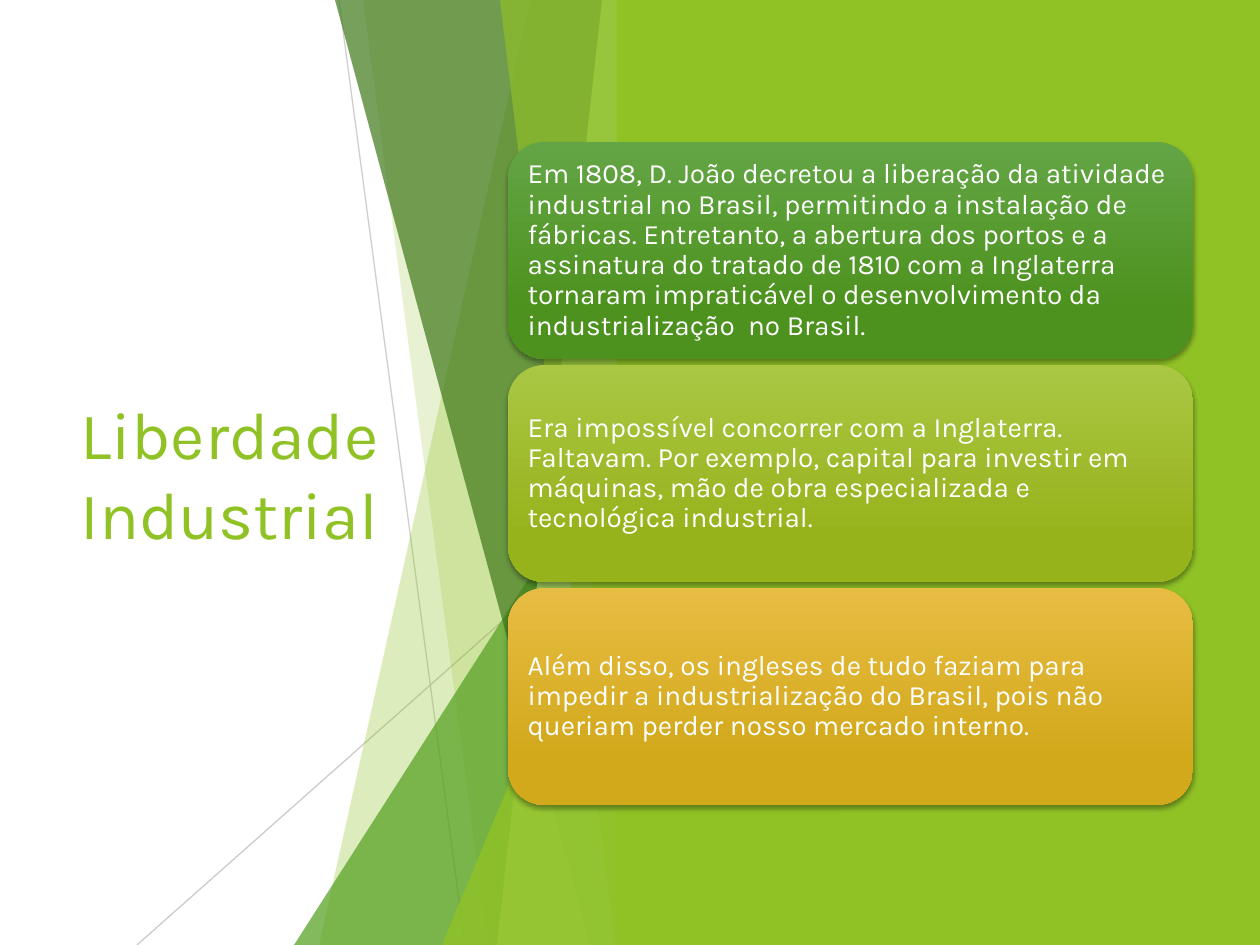
from dataclasses import dataclass

from lxml import etree
from pptx import Presentation
from pptx import util as u
from pptx.dml.color import RGBColor
from pptx.enum import shapes, text
from pptx.oxml.ns import qn

EMU_PER_PX = 914400 / 126
WIDTH, HEIGHT = 1260, 945
FACET_RIGHT = 630
FONT = "Karla"

WHITE = RGBColor(0xFF, 0xFF, 0xFF)
LIME = RGBColor(0x90, 0xC2, 0x26)
GREEN = RGBColor(0x54, 0xA0, 0x21)
DARK_GREEN = RGBColor(0x3F, 0x78, 0x19)
PALE_LIME = RGBColor(0xC0, 0xE4, 0x74)
GREY = RGBColor(0xBF, 0xBF, 0xBF)


@dataclass(frozen=True)
class Ray:
    start: tuple[int, int]
    end: tuple[int, int]
    opacity: int


@dataclass(frozen=True)
class Facet:
    """A band from a slanted left edge to the common right edge."""
    top_x: int
    bottom_x: int
    color: RGBColor
    opacity: int


@dataclass(frozen=True)
class Wedge:
    """A right triangle standing on the slide's bottom edge."""
    left: int
    top: int
    color: RGBColor
    opacity: int


@dataclass(frozen=True)
class Card:
    light: RGBColor
    deep: RGBColor
    words: str


RAYS = [Ray((339, 0), (465, HEIGHT), 75), Ray((630, 508), (137, HEIGHT), 80)]

FACETS = [
    Facet(530, 319, LIME, 30),
    Facet(363, 488, LIME, 20),
    Wedge(294, 420, GREEN, 72),
    Facet(335, 590, DARK_GREEN, 70),
    Facet(602, 497, PALE_LIME, 70),
    Facet(500, 615, LIME, 65),
    Wedge(442, 495, LIME, 80),
]

CARD_LEFT, CARD_TOP, CARD_WIDTH, CARD_HEIGHT, CARD_PITCH = 508, 142, 685, 217, 223
CARDS = [
    Card(RGBColor(0x63, 0xA5, 0x45), RGBColor(0x4D, 0x92, 0x1E),
         "Em 1808, D. João decretou a liberação da atividade industrial no Brasil, "
         "permitindo a instalação de fábricas. Entretanto, a abertura dos portos e a "
         "assinatura do tratado de 1810 com a Inglaterra tornaram impraticável o "
         "desenvolvimento da industrialização  no Brasil."),
    Card(RGBColor(0xAA, 0xC7, 0x44), RGBColor(0x97, 0xB3, 0x1C),
         "Era impossível concorrer com a Inglaterra. Faltavam. Por exemplo, capital "
         "para investir em máquinas, mão de obra especializada e tecnológica industrial."),
    Card(RGBColor(0xE7, 0xBC, 0x43), RGBColor(0xD2, 0xA9, 0x1B),
         "Além disso, os ingleses de tudo faziam para impedir a industrialização do "
         "Brasil, pois não queriam perder nosso mercado interno."),
]


def px(length: int) -> u.Emu:
    return u.Emu(round(length * EMU_PER_PX))


def set_opacity(element, percent: int) -> None:
    for color in element.spPr.iter(qn("a:srgbClr")):
        etree.SubElement(color, qn("a:alpha"), val=str(percent * 1000))


def paint(shape, color: RGBColor, opacity: int = 100) -> None:
    shape.shadow.inherit = False
    shape.line.fill.background()
    shape.fill.solid()
    shape.fill.fore_color.rgb = color
    if opacity < 100:
        set_opacity(shape.element, opacity)


def add_block(page, kind, left: int, top: int, width: int, height: int):
    return page.shapes.add_shape(kind, px(left), px(top), px(width), px(height))


def write(frame, words: str, size: int, color: RGBColor, spacing: float) -> None:
    frame.word_wrap = True
    frame.auto_size = text.MSO_AUTO_SIZE.NONE
    frame.vertical_anchor = text.MSO_ANCHOR.MIDDLE
    para = frame.paragraphs[0]
    para.alignment = text.PP_ALIGN.LEFT
    para.line_spacing = spacing
    span = para.add_run()
    span.text = words
    span.font.name = FONT
    span.font.size = u.Pt(size)
    span.font.color.rgb = color


def add_title(page) -> None:
    title = page.shapes.title
    title.left, title.top, title.width, title.height = map(px, (68, 190, 367, 565))
    write(title.text_frame, "Liberdade Industrial", 38, LIME, 1.0)


def add_ray(page, ray: Ray) -> None:
    line = page.shapes.add_connector(
        shapes.MSO_CONNECTOR.STRAIGHT, *map(px, ray.start + ray.end))
    line.line.color.rgb = GREY
    line.line.width = u.Pt(0.75)
    set_opacity(line.element, ray.opacity)
    etree.SubElement(line.element.spPr, qn("a:effectLst"))


def add_facet(page, facet: Facet) -> None:
    outline = page.shapes.build_freeform(facet.top_x, 0, scale=EMU_PER_PX)
    outline.add_line_segments(
        [(FACET_RIGHT, 0), (FACET_RIGHT, HEIGHT), (facet.bottom_x, HEIGHT)], close=True)
    paint(outline.convert_to_shape(), facet.color, facet.opacity)


def add_wedge(page, wedge: Wedge) -> None:
    triangle = add_block(page, shapes.MSO_SHAPE.ISOSCELES_TRIANGLE, wedge.left, wedge.top,
                         FACET_RIGHT - wedge.left, HEIGHT - wedge.top)
    triangle.adjustments[0] = 1
    paint(triangle, wedge.color, wedge.opacity)


def add_soft_shadow(shape) -> None:
    shape.shadow.inherit = False
    effects = shape.element.spPr.find(qn("a:effectLst"))
    shadow = etree.SubElement(
        effects, qn("a:outerShdw"), blurRad=str(u.Pt(3)), dist=str(u.Pt(2)),
        dir="5400000", rotWithShape="0")
    color = etree.SubElement(shadow, qn("a:srgbClr"), val="000000")
    etree.SubElement(color, qn("a:alpha"), val="35000")


def add_card(page, card: Card, top: int) -> None:
    box = add_block(page, shapes.MSO_SHAPE.ROUNDED_RECTANGLE,
                    CARD_LEFT, top, CARD_WIDTH, CARD_HEIGHT)
    box.line.fill.background()
    box.fill.gradient()
    box.fill.gradient_angle = 270
    for stop, color, position in zip(
            box.fill.gradient_stops, (card.light, card.deep), (0, 0.78)):
        stop.color.rgb = color
        stop.position = position
    add_soft_shadow(box)
    frame = box.text_frame
    frame.margin_left = frame.margin_right = px(9)
    frame.margin_top = frame.margin_bottom = px(9)
    write(frame, card.words, 16, WHITE, 0.9)


def main() -> None:
    deck = Presentation()
    deck.slide_width, deck.slide_height = px(WIDTH), px(HEIGHT)
    page = deck.slides.add_slide(deck.slide_layouts[5])

    add_title(page)
    for ray in RAYS:
        add_ray(page, ray)
    for part in FACETS:
        if isinstance(part, Wedge):
            add_wedge(page, part)
        else:
            add_facet(page, part)
    panel = add_block(page, shapes.MSO_SHAPE.RECTANGLE, 617, 0, WIDTH - 617, HEIGHT)
    paint(panel, LIME)
    for row, card in enumerate(CARDS):
        add_card(page, card, CARD_TOP + row * CARD_PITCH)

    deck.save("out.pptx")


if __name__ == "__main__":
    main()
